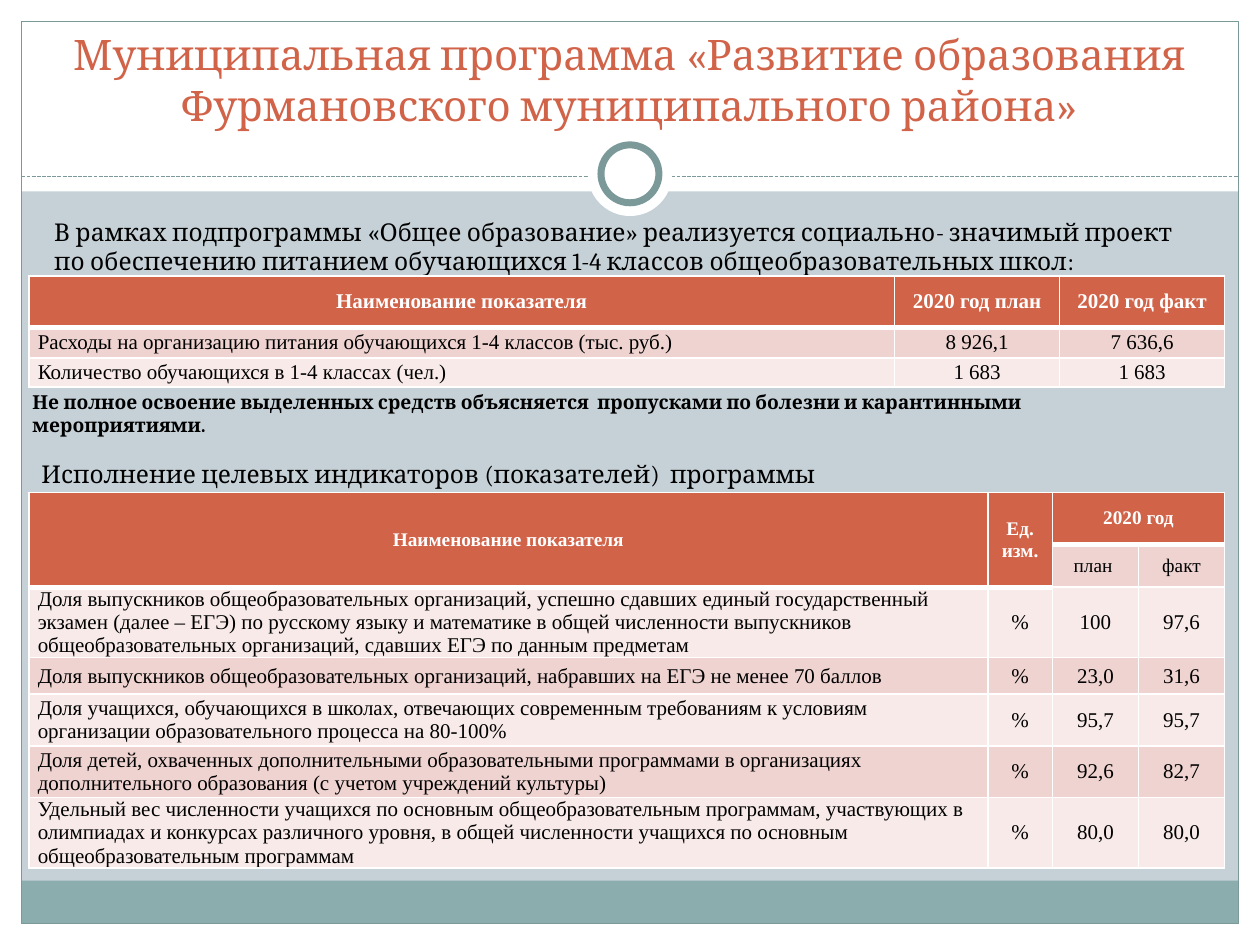
from dataclasses import dataclass
from typing import Optional

from lxml.etree import SubElement
from pptx import Presentation
from pptx.dml.color import RGBColor
from pptx.enum.dml import MSO_LINE_DASH_STYLE as Dash
from pptx.enum.shapes import MSO_CONNECTOR as Connector, MSO_SHAPE as Preset
from pptx.enum.text import MSO_ANCHOR as Anchor, MSO_AUTO_SIZE as AutoSize, PP_ALIGN as Align
from pptx.oxml.ns import qn
from pptx.util import Inches, Pt


@dataclass(frozen=True)
class Theme:
    background: str = "C5D1D7"
    white: str = "FFFFFF"
    black: str = "000000"
    accent: str = "D16349"
    footer: str = "8CADAE"
    frame: str = "7C999A"
    bands: tuple = ("EED3D0", "F7EAE9")
    heading_font: str = "Cambria"
    table_font: str = "Times New Roman"
    title_size: int = 24
    lead_size: int = 14
    cell_size: int = 12
    small_size: int = 11


@dataclass(frozen=True)
class Box:
    left: float
    top: float
    width: float
    height: float

    def lengths(self) -> tuple:
        return tuple(Inches(v) for v in (self.left, self.top, self.width, self.height))


@dataclass(frozen=True)
class Panel:
    box: Box
    fill: Optional[str] = None
    line: Optional[str] = None
    weight: float = 0.75
    preset: int = Preset.RECTANGLE


@dataclass(frozen=True)
class Grid:
    box: Box
    column_shares: tuple
    row_heights: tuple
    rows: tuple
    header_size: int
    label_align: int
    header_rows: int = 1
    merges: tuple = ()


THEME = Theme()
WIDTH, HEIGHT = 10, 7.5
MARGIN = 0.17
INNER_WIDTH = WIDTH - 2 * MARGIN
INNER_HEIGHT = HEIGHT - 2 * MARGIN
HEADER_HEIGHT, RULE_TOP, FOOTER_HEIGHT = 1.52, 1.4, 0.34
RING_CENTRE = (WIDTH / 2, 1.38)
TABLE_LEFT, TABLE_WIDTH = 0.23, 9.49


def centred_square(size: float) -> Box:
    x, y = RING_CENTRE
    return Box(x - size / 2, y - size / 2, size, size)


PANELS = (
    Panel(Box(0, HEIGHT - MARGIN, WIDTH, MARGIN), THEME.white),
    Panel(Box(0, 0, WIDTH, HEADER_HEIGHT), THEME.white),
    Panel(Box(0, 0, MARGIN, HEIGHT), THEME.white),
    Panel(Box(WIDTH - MARGIN, 0, MARGIN, HEIGHT), THEME.white),
    Panel(Box(MARGIN, HEIGHT - MARGIN - FOOTER_HEIGHT, INNER_WIDTH, FOOTER_HEIGHT), THEME.footer),
    Panel(Box(MARGIN, MARGIN, INNER_WIDTH, INNER_HEIGHT), line=THEME.frame),
)
RINGS = (
    Panel(centred_square(0.67), THEME.white, preset=Preset.OVAL),
    Panel(centred_square(0.46), THEME.white, THEME.frame, 4, Preset.OVAL),
)

MEALS = Grid(
    Box(TABLE_LEFT, 2.19, TABLE_WIDTH, 0.88), (0.724, 0.138, 0.138), (0.41, 0.24, 0.23),
    (
        ("Наименование показателя", "2020 год план", "2020 год факт"),
        ("Расходы на организацию питания обучающихся 1-4 классов (тыс. руб.)", "8 926,1", "7 636,6"),
        ("Количество обучающихся в 1-4 классах (чел.)", "1 683", "1 683"),
    ),
    THEME.cell_size, Align.JUSTIFY,
)
INDICATORS = Grid(
    Box(TABLE_LEFT, 3.91, TABLE_WIDTH, 2.97), (0.802, 0.054, 0.072, 0.072),
    (0.41, 0.33, 0.56, 0.29, 0.41, 0.41, 0.56),
    (
        ("Наименование показателя", "Ед. изм.", "2020 год", ""),
        ("", "", "план ", "факт"),
        ("Доля выпускников общеобразовательных организаций, успешно сдавших единый государственный "
         "экзамен (далее – ЕГЭ) по русскому языку и математике в общей численности выпускников "
         "общеобразовательных организаций, сдавших ЕГЭ по данным предметам", "%", "100", "97,6"),
        ("Доля выпускников общеобразовательных организаций, набравших на ЕГЭ не менее 70 баллов",
         "%", "23,0", "31,6"),
        ("Доля учащихся, обучающихся в школах, отвечающих современным требованиям к условиям "
         "организации образовательного процесса на 80-100%", "%", "95,7", "95,7"),
        ("Доля детей, охваченных дополнительными образовательными программами в организациях "
         "дополнительного образования (с учетом учреждений культуры)", "%", "92,6", "82,7"),
        ("Удельный вес численности учащихся по основным общеобразовательным программам, участвующих в "
         "олимпиадах и конкурсах различного уровня, в общей численности учащихся по основным "
         "общеобразовательным программам", "%", "80,0", "80,0"),
    ),
    THEME.small_size, Align.LEFT, header_rows=2,
    merges=(((0, 0), (1, 0)), ((0, 1), (1, 1)), ((0, 2), (0, 3))),
)


def color(value: str) -> RGBColor:
    return RGBColor.from_string(value)


def style_font(font, name: str, size: int, ink: str, bold: bool = False) -> None:
    font.name, font.size, font.bold = name, Pt(size), bold
    font.color.rgb = color(ink)


def draw_panel(slide, panel: Panel) -> None:
    shape = slide.shapes.add_shape(panel.preset, *panel.box.lengths())
    shape.shadow.inherit = False
    if panel.fill:
        shape.fill.solid()
        shape.fill.fore_color.rgb = color(panel.fill)
    else:
        shape.fill.background()
    if panel.line:
        shape.line.color.rgb = color(panel.line)
        shape.line.width = Pt(panel.weight)
    else:
        shape.line.fill.background()


def draw_rule(slide) -> None:
    y = Inches(RULE_TOP)
    rule = slide.shapes.add_connector(Connector.STRAIGHT, Inches(MARGIN), y, Inches(WIDTH - MARGIN), y)
    rule.line.color.rgb = color(THEME.frame)
    rule.line.width = Pt(0.75)
    rule.line.dash_style = Dash.SQUARE_DOT
    SubElement(rule.element.spPr, qn("a:effectLst"))


def write_text(shape, box: Box, text: str, size: int, ink: str = THEME.black, bold: bool = False,
               align: int = Align.LEFT, anchor: int = Anchor.TOP, before: float = 0) -> None:
    shape.left, shape.top, shape.width, shape.height = box.lengths()
    frame = shape.text_frame
    frame.text = text
    frame.word_wrap, frame.auto_size, frame.vertical_anchor = True, AutoSize.NONE, anchor
    paragraph = frame.paragraphs[0]
    paragraph.alignment, paragraph.space_before = align, Pt(before)
    style_font(paragraph.font, THEME.heading_font, size, ink, bold)


def add_note(slide, box: Box, text: str, size: int, **options) -> None:
    write_text(slide.shapes.add_textbox(*box.lengths()), box, text, size, **options)


def set_borders(cell, bottom: float) -> None:
    properties = cell._tc.get_or_add_tcPr()
    for index, (side, weight) in enumerate((("L", 1), ("R", 1), ("T", 1), ("B", bottom))):
        line = properties.makeelement(qn(f"a:ln{side}"), {"w": str(Pt(weight))})
        SubElement(SubElement(line, qn("a:solidFill")), qn("a:srgbClr"), val=THEME.white)
        properties.insert(index, line)


def draw_table(slide, grid: Grid) -> None:
    table = slide.shapes.add_table(len(grid.rows), len(grid.column_shares), *grid.box.lengths()).table
    table.horz_banding = False
    for column, share in zip(table.columns, grid.column_shares):
        column.width = Inches(grid.box.width * share)
    for row, height in zip(table.rows, grid.row_heights):
        row.height = Inches(height)
    for first, last in grid.merges:
        table.cell(*first).merge(table.cell(*last))
    for r, texts in enumerate(grid.rows):
        for c, text in enumerate(texts):
            cell = table.cell(r, c)
            heading = r == 0 or cell.is_spanned
            cell.fill.solid()
            cell.fill.fore_color.rgb = color(THEME.accent if heading else THEME.bands[(r - 1) % 2])
            set_borders(cell, 3 if heading else 1)
            cell.margin_left = cell.margin_right = Inches(0.07)
            cell.margin_top = cell.margin_bottom = 0
            cell.vertical_anchor = Anchor.MIDDLE
            cell.text = text
            paragraph = cell.text_frame.paragraphs[0]
            is_label = c == 0 and r >= grid.header_rows
            paragraph.alignment = grid.label_align if is_label else Align.CENTER
            size = grid.header_size if r < grid.header_rows else THEME.cell_size
            style_font(paragraph.font, THEME.table_font, size,
                       THEME.white if heading else THEME.black, heading)


def main() -> None:
    presentation = Presentation()
    presentation.slide_width, presentation.slide_height = Inches(WIDTH), Inches(HEIGHT)
    slide = presentation.slides.add_slide(presentation.slide_layouts[1])
    slide.background.fill.solid()
    slide.background.fill.fore_color.rgb = color(THEME.background)

    # Frame, dashed rule and ring
    for panel in PANELS:
        draw_panel(slide, panel)
    draw_rule(slide)
    for ring in RINGS:
        draw_panel(slide, ring)

    # Title and lead text, lifted above the frame
    title, body = slide.shapes.title, slide.placeholders[1]
    for placeholder in (title, body):
        placeholder.element.getparent().append(placeholder.element)
    write_text(title, Box(0.33, 0.25, 9.33, 0.83),
               "Муниципальная программа «Развитие образования Фурмановского муниципального района»",
               THEME.title_size, THEME.accent, align=Align.CENTER, anchor=Anchor.BOTTOM)
    write_text(body, Box(0.33, 1.67, 9.3, 0.67),
               "В рамках подпрограммы «Общее образование» реализуется социально- значимый проект "
               "по обеспечению питанием обучающихся 1-4 классов общеобразовательных школ:",
               THEME.lead_size, before=2.8)
    properties = body.text_frame.paragraphs[0]._p.get_or_add_pPr()
    properties.set("marL", "0")
    properties.set("indent", "0")
    properties.insert_element_before(properties.makeelement(qn("a:buNone")), "a:tabLst", "a:defRPr")

    # Tables and the notes between them
    draw_table(slide, MEALS)
    add_note(slide, Box(0.23, 3.59, 9.3, 0.31),
             "Исполнение целевых индикаторов (показателей)  программы", THEME.lead_size)
    add_note(slide, Box(0.16, 3.05, 9.3, 0.55),
             "Не полное освоение выделенных средств объясняется  пропусками по болезни и карантинными "
             "мероприятиями.", THEME.small_size, bold=True, before=2.2)
    draw_table(slide, INDICATORS)
    presentation.save("out.pptx")


if __name__ == "__main__":
    main()
